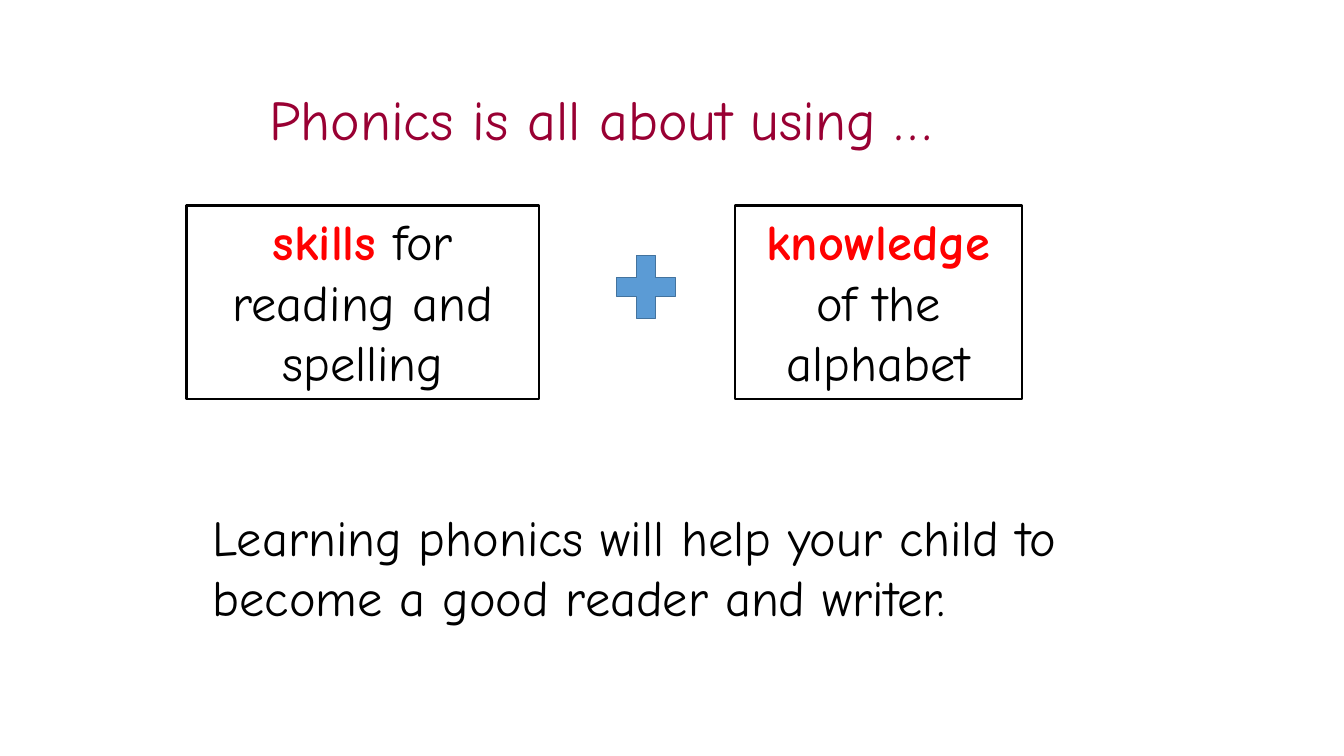
"""Build a slide on what phonics is about: skills plus knowledge."""
from pptx import Presentation
from pptx.dml.color import RGBColor
from pptx.enum.shapes import MSO_SHAPE
from pptx.enum.text import MSO_ANCHOR, PP_ALIGN
from pptx.util import Cm, Pt

COLORS = {"title": "990033", "key": "FF0000", "text": "000000",
          "plus": "5B9BD5", "plus_line": "43739E"}
FONT = "Comic Neue"
TITLE = "Phonics is all about using …"
CLOSING = "Learning phonics will help your child to become a good reader and writer."
CARD_TOP, CARD_HEIGHT = 5.18, 4.88
CARDS = [
    {"left": 4.7, "width": 8.89, "key": "skills", "rest": " for reading and spelling"},
    {"left": 18.52, "width": 7.24, "key": "knowledge", "rest": " of the alphabet"},
]


def color(name):
    return RGBColor.from_string(COLORS[name])


def place(left, top, width, height):
    return [Cm(value) for value in (left, top, width, height)]


def write(shape, parts, size, align=PP_ALIGN.LEFT, anchor=MSO_ANCHOR.TOP, wrap=True):
    frame = shape.text_frame
    frame.word_wrap = wrap
    frame.vertical_anchor = anchor
    para = frame.paragraphs[0]
    para.alignment = align
    para.font.name = FONT
    para.font.size = Pt(size)
    for text, tone, bold in parts:
        span = para.add_run()
        span.text = text
        span.font.bold = bold
        span.font.color.rgb = color(tone)


def add_figure(page, kind, area, line, weight, fill=None):
    shape = page.shapes.add_shape(kind, *area)
    shape.shadow.inherit = False
    if fill:
        shape.fill.solid()
        shape.fill.fore_color.rgb = color(fill)
    else:
        shape.fill.background()
    shape.line.color.rgb = color(line)
    shape.line.width = Pt(weight)
    return shape


def main():
    deck = Presentation()
    deck.slide_width, deck.slide_height = Cm(33.87), Cm(19.05)
    page = deck.slides.add_slide(deck.slide_layouts[5])

    title = page.shapes.title
    title.left, title.top, title.width, title.height = place(6.53, 2.01, 18.19, 1.96)
    write(title, [(TITLE, "title", False)], 40, wrap=False)

    for card in CARDS:
        area = place(card["left"], CARD_TOP, card["width"], CARD_HEIGHT)
        box = add_figure(page, MSO_SHAPE.RECTANGLE, area, "text", 1.5)
        parts = [(card["key"], "key", True), (card["rest"], "text", False)]
        write(box, parts, 36, PP_ALIGN.CENTER)

    add_figure(page, MSO_SHAPE.MATH_PLUS, place(15.27, 6.15, 2.03, 2.16),
               "plus_line", 1, "plus")

    closing = page.shapes.add_textbox(*place(5.11, 12.62, 23.7, 3.33))
    write(closing, [(CLOSING, "text", False)], 36)
    deck.save("out.pptx")


if __name__ == "__main__":
    main()
